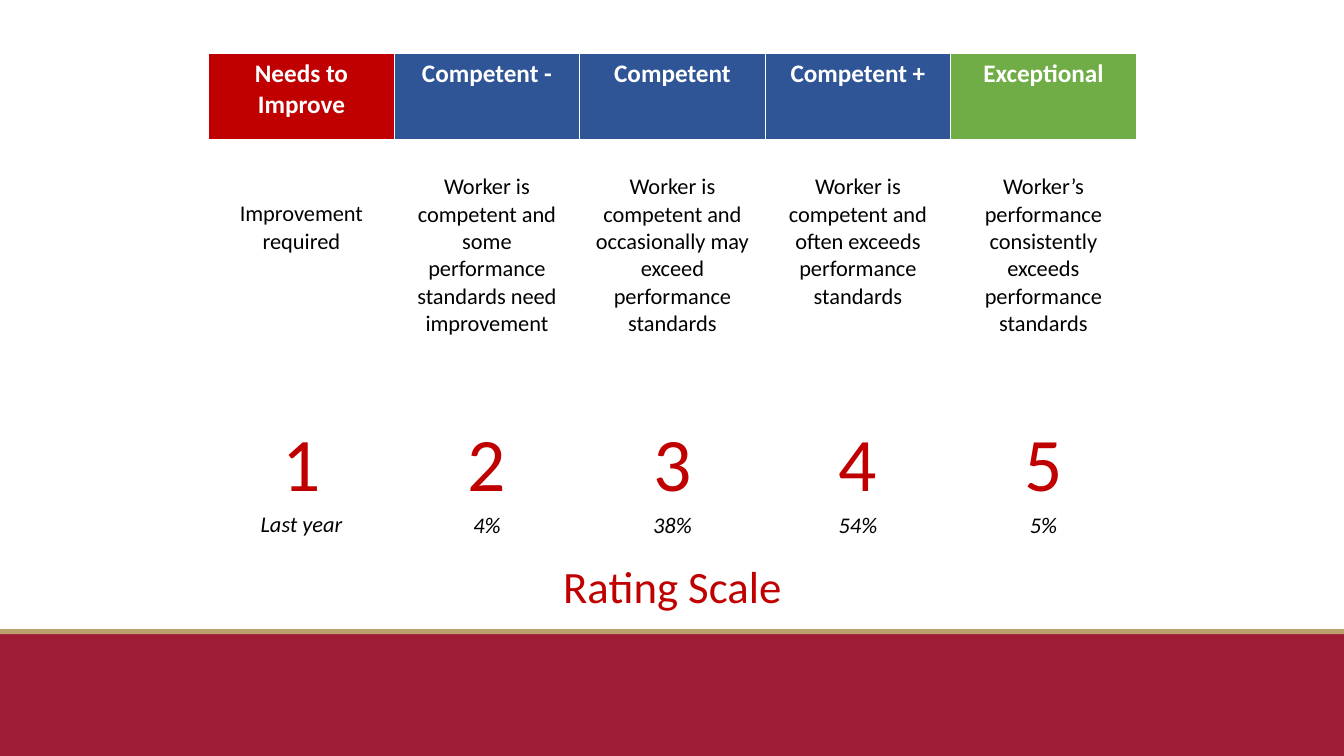
"""Build the rating scale slide."""
from typing import NamedTuple

from lxml.etree import SubElement
from pptx import Presentation
from pptx.dml.color import RGBColor as Rgb
from pptx.enum.shapes import MSO_SHAPE as Kind
from pptx.enum.text import MSO_ANCHOR as Anchor, PP_ALIGN as Align
from pptx.oxml.ns import qn
from pptx.util import Emu, Pt

SCALE = 9144
FONT = "Calibri"
LINE = 19.53
BODY = 10
INK = {
    "red": "C00000", "blue": "2F5597", "green": "70AD47", "white": "FFFFFF",
    "black": "000000", "wine": "9E1C36", "gold": "BAA06A",
}


class Band(NamedTuple):
    top: int
    high: int
    ink: str


class Grade(NamedTuple):
    name: str
    ink: str
    text: str
    lines: int
    share: str
    lead: int = 1


BANDS = [Band(629, 121, "wine"), Band(624, 5, "gold")]
GRADES = [
    Grade("Needs to Improve", "red", "Improvement required", 2, "Last year", 2),
    Grade("Competent -", "blue",
          "Worker is competent and some performance standards need improvement", 6, "4%"),
    Grade("Competent", "blue",
          "Worker is competent and occasionally may exceed performance standards", 6, "38%"),
    Grade("Competent +", "blue",
          "Worker is competent and often exceeds performance standards", 5, "54%"),
    Grade("Exceptional", "green",
          "Worker’s performance consistently exceeds performance standards", 6, "5%"),
]


def px(count: int) -> Emu:
    """Turn px into EMU."""
    return Emu(count * SCALE)


def tint(name: str) -> Rgb:
    """Look up a colour."""
    return Rgb.from_string(INK[name])


def write(para, text: str, size: int, ink: str, bold: bool = False,
          slant: bool = False) -> None:
    """Add one centred run to a paragraph."""
    para.alignment = Align.CENTER
    run = para.add_run()
    run.text = text
    font = run.font
    font.name, font.size, font.bold, font.italic = FONT, Pt(size), bold, slant
    font.color.rgb = tint(ink)


def dress(cell, ink: str, top: int, base: int) -> None:
    """Fill a cell and give it white borders, with widths in points."""
    cell.fill.solid()
    cell.fill.fore_color.rgb = tint(ink)
    props = cell._tc.get_or_add_tcPr()
    for spot, (side, width) in enumerate(zip("LRTB", (1, 1, top, base))):
        edge = SubElement(props, qn(f"a:ln{side}"), w=str(Pt(width)))
        fill = SubElement(edge, qn("a:solidFill"))
        SubElement(fill, qn("a:srgbClr"), val=INK["white"])
        props.insert(spot, edge)


def draw_band(slide, band: Band) -> None:
    """Draw one full-width band."""
    shape = slide.shapes.add_shape(Kind.RECTANGLE, 0, px(band.top), px(1333), px(band.high))
    shape.shadow.inherit = False
    shape.fill.solid()
    shape.fill.fore_color.rgb = tint(band.ink)
    shape.line.fill.background()


def draw_grade(table, col: int, grade: Grade) -> None:
    """Fill the column of one grade."""
    table.columns[col].width = px(184)
    head, body = table.cell(0, col), table.cell(1, col)
    dress(head, grade.ink, 1, 3)
    write(head.text_frame.paragraphs[0], grade.name, 18, "white", bold=True)
    dress(body, "white", 3, 1)
    body.margin_top = px(5 + 27 * grade.lead)
    frame = body.text_frame
    write(frame.paragraphs[0], grade.text, 16, "black")
    mark = frame.add_paragraph()
    mark.space_before = Pt(round(LINE * (BODY - grade.lead - grade.lines), 1))
    write(mark, str(col + 1), 54, "red")
    write(frame.add_paragraph(), grade.share, 16, "black", slant=True)


def draw_table(slide) -> None:
    """Draw the table of grades."""
    count = len(GRADES)
    table = slide.shapes.add_table(
        2, count, px(207), px(53), px(184 * count), px(480)).table
    table.horz_banding = False
    for row, high in zip(table.rows, (87, 393)):
        row.height = px(high)
    for col, grade in enumerate(GRADES):
        draw_grade(table, col, grade)


def draw_title(slide) -> None:
    """Place the title under the table."""
    title = slide.shapes.title
    title.left, title.top, title.width, title.height = map(px, (548, 549, 238, 64))
    frame = title.text_frame
    frame.word_wrap = False
    frame.vertical_anchor = Anchor.TOP
    write(frame.paragraphs[0], "Rating Scale", 32, "red")


def main() -> None:
    """Build and save the deck."""
    deck = Presentation()
    deck.slide_width, deck.slide_height = px(1333), px(750)
    slide = deck.slides.add_slide(deck.slide_layouts[5])
    for band in BANDS:
        draw_band(slide, band)
    draw_table(slide)
    draw_title(slide)
    deck.save("out.pptx")


if __name__ == "__main__":
    main()
